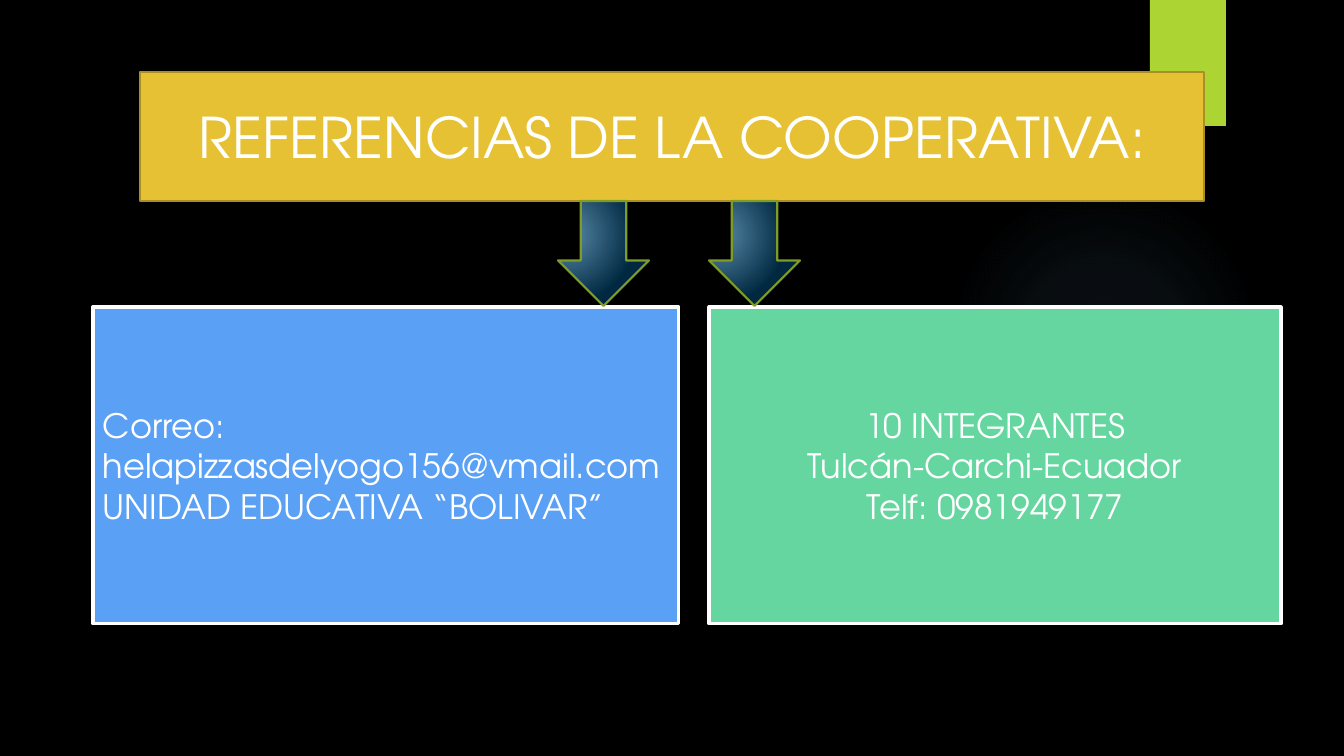
from lxml import etree
from pptx import Presentation
from pptx.dml.color import RGBColor
from pptx.enum.shapes import MSO_SHAPE as Shape
from pptx.enum.text import MSO_ANCHOR as Anchor, MSO_AUTO_SIZE as AutoSize, PP_ALIGN as Align
from pptx.oxml.ns import nsdecls
from pptx.util import Pt

PX = 914400 / 100.8
FONT = "TeX Gyre Adventor"
BLACK = RGBColor(0x00, 0x00, 0x00)
WHITE = RGBColor(0xFF, 0xFF, 0xFF)
LIME = RGBColor(0xAC, 0xD4, 0x33)
OLIVE = RGBColor(0x7F, 0x9D, 0x26)
GOLD = RGBColor(0xE6, 0xC1, 0x33)
DARK_GOLD = RGBColor(0xAA, 0x8F, 0x26)
BLUE = RGBColor(0x5A, 0xA0, 0xF5)
GREEN = RGBColor(0x65, 0xD6, 0xA0)
SKY = RGBColor(0x7A, 0xC4, 0xF0)
STEEL = RGBColor(0x5A, 0x8C, 0xAB)
NAVY = RGBColor(0x00, 0x28, 0x41)


def add_shape(kind, *box):
    """Add a shape without shadow or line; box is left, top, width, height in px."""
    shape = slide.shapes.add_shape(kind, *(round(n * PX) for n in box))
    shape.shadow.inherit = False
    shape.line.fill.background()
    return shape


def radial_fill(shape, stops, focus):
    """Fill from (position, colour, opacity) stops around a focus, all in percent."""
    stop_xml = "".join(
        f'<a:gs pos="{pos * 1000}"><a:srgbClr val="{color}">'
        f'<a:alpha val="{opacity * 1000}"/></a:srgbClr></a:gs>'
        for pos, color, opacity in stops)
    left, top, right, bottom = (n * 1000 for n in focus)
    gradient = etree.fromstring(
        f'<a:gradFill {nsdecls("a")} rotWithShape="1"><a:gsLst>{stop_xml}</a:gsLst>'
        f'<a:path path="circle"><a:fillToRect l="{left}" t="{top}" r="{right}" b="{bottom}"/>'
        '</a:path></a:gradFill>')
    shape._element.spPr.prstGeom.addnext(gradient)


prs = Presentation()
prs.slide_width = round(1344 * PX)
prs.slide_height = round(756 * PX)
slide = prs.slides.add_slide(prs.slide_layouts[5])
slide.background.fill.solid()
slide.background.fill.fore_color.rgb = BLACK

glow = add_shape(Shape.OVAL, 949, 184, 310, 310)
radial_fill(glow, [(0, SKY, 7), (36, SKY, 6), (69, SKY, 0)], (50, 50, 50, 50))

tab = add_shape(Shape.RECTANGLE, 1150, 0, 76, 126)
tab.fill.solid()
tab.fill.fore_color.rgb = LIME

title = slide.shapes.title
slide.shapes._spTree.append(title._element)  # in front of the tab
title.left, title.top, title.width, title.height = (
    round(n * PX) for n in (140, 72, 1064, 129))
title.fill.solid()
title.fill.fore_color.rgb = GOLD
title.line.color.rgb = DARK_GOLD
title.line.width = Pt(1.5)
title.text_frame.text = "REFERENCIAS DE LA COOPERATIVA:"
title.text_frame.auto_size = AutoSize.NONE
title.text_frame.vertical_anchor = Anchor.MIDDLE
heading = title.text_frame.paragraphs[0]
heading.alignment = Align.CENTER
heading.font.name = FONT
heading.font.size = Pt(40)
heading.font.color.rgb = WHITE

CARDS = [
    (93, 586, BLUE, Align.LEFT,
     ["Correo: helapizzasdelyogo156@vmail.com", "UNIDAD EDUCATIVA “BOLIVAR”"]),
    (709, 572, GREEN, Align.CENTER,
     ["10 INTEGRANTES", "Tulcán-Carchi-Ecuador", "Telf: 0981949177"]),
]
for left, width, color, alignment, lines in CARDS:
    card = add_shape(Shape.RECTANGLE, left, 307, width, 317)
    card.fill.solid()
    card.fill.fore_color.rgb = color
    card.line.color.rgb = WHITE
    card.line.width = Pt(2.25)
    card.text_frame.text = "\n".join(lines)
    card.text_frame.word_wrap = True
    card.text_frame.vertical_anchor = Anchor.MIDDLE
    for paragraph in card.text_frame.paragraphs:
        paragraph.alignment = alignment
        paragraph.font.name = FONT
        paragraph.font.size = Pt(24)
        paragraph.font.color.rgb = WHITE

for left in (558, 709):
    arrow = add_shape(Shape.DOWN_ARROW, left, 201, 91, 105)
    radial_fill(arrow, [(0, STEEL, 100), (100, NAVY, 100)], (45, 65, 125, 100))
    arrow.line.color.rgb = OLIVE
    arrow.line.width = Pt(1.5)

prs.save("out.pptx")
